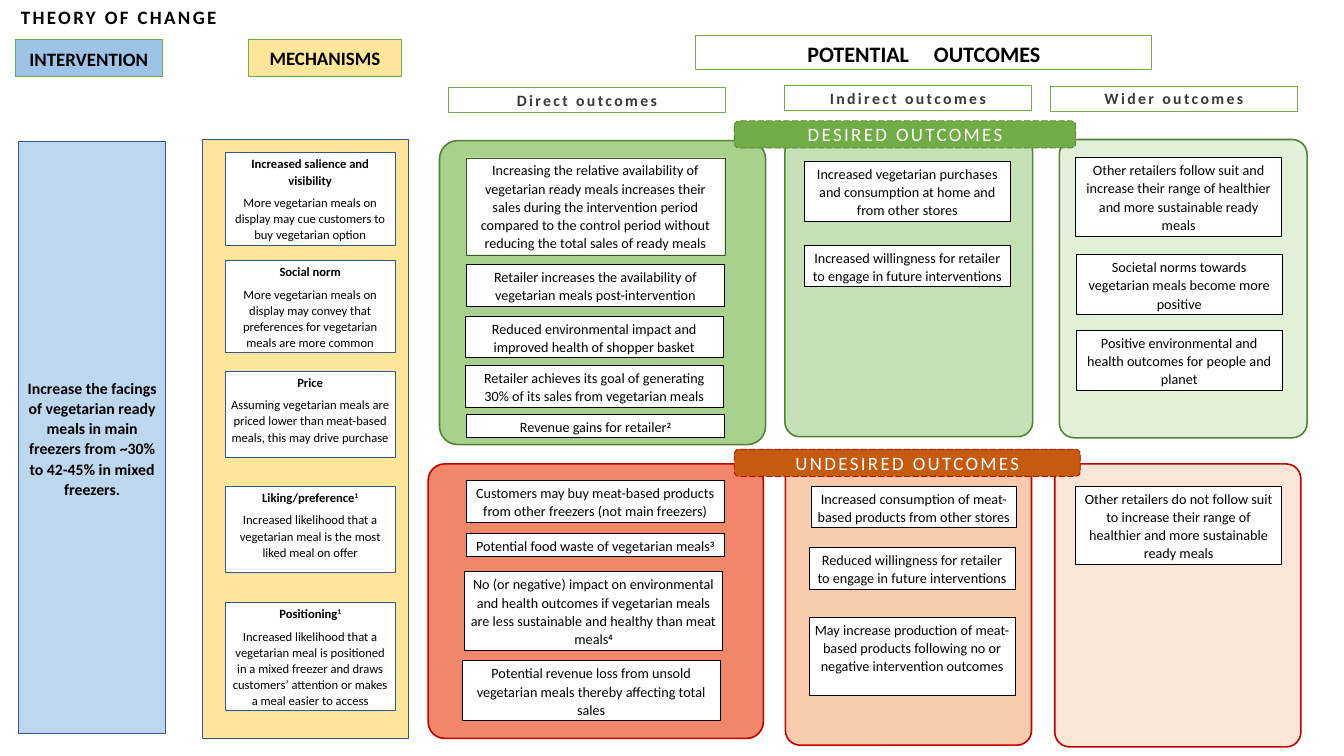
from dataclasses import dataclass

from pptx import Presentation
from pptx.dml.color import RGBColor
from pptx.enum.dml import MSO_LINE
from pptx.enum.shapes import MSO_SHAPE as Preset
from pptx.enum.text import MSO_ANCHOR as Anchor, MSO_AUTO_SIZE as AutoSize, PP_ALIGN as Align
from pptx.util import Inches, Pt

COLORS = {
    "black": "000000", "white": "FFFFFF", "heading": "3B3838",
    "green": "70AD47", "green_edge": "548235", "green_badge_edge": "538035",
    "deep_green": "385723", "red": "C00000", "rust": "C55A11", "navy": "325491",
    "blue": "9DC3E6", "pale_blue": "BDD7EE", "yellow": "FFE699",
    "direct_good": "A9D18E", "indirect_good": "C5E0B4", "wider_good": "E2F0D9",
    "direct_bad": "F18669", "indirect_bad": "F8CBAD", "wider_bad": "FBE5D6",
}


@dataclass
class Card:
    """An outcome card, offset from its panel and sized by its line count."""
    dx: float
    dy: float
    lines: int
    text: str
    edge: str = "black"
    edge_width: float = 1


def rgb(name):
    """Return the named palette colour."""
    return RGBColor.from_string(COLORS[name])


def draw_box(slide, box, fill, edge, edge_width=1, corner=None):
    """Draw a rectangle, rounded when a corner ratio is given."""
    preset = Preset.RECTANGLE if corner is None else Preset.ROUNDED_RECTANGLE
    panel = slide.shapes.add_shape(preset, *map(Inches, box))
    if corner is not None:
        panel.adjustments[0] = corner
    panel.shadow.inherit = False
    panel.fill.solid()
    panel.fill.fore_color.rgb = rgb(fill)
    panel.line.color.rgb = rgb(edge)
    panel.line.width = Pt(edge_width)
    return panel


def write(holder, texts, size, color="black", bold=(False,), anchor=Anchor.TOP,
          tracking=0, spacing=1.07):
    """Fill a shape with centred paragraphs; ^ starts a bold superscript."""
    frame = holder.text_frame
    frame.word_wrap = True
    frame.vertical_anchor = anchor
    for index, (text, heavy) in enumerate(zip(texts, bold)):
        paragraph = frame.paragraphs[0] if index == 0 else frame.add_paragraph()
        paragraph.alignment = Align.CENTER
        paragraph.line_spacing = spacing
        paragraph.space_before = Pt(0)
        paragraph.space_after = Pt(8 if spacing > 1 else 0)
        paragraph.font.name = "Calibri"
        paragraph.font.size = Pt(size)
        paragraph.font.bold = heavy
        paragraph.font.color.rgb = rgb(color)
        for position, part in enumerate(text.split("^")):
            run = paragraph.add_run()
            run.text = part
            if tracking:
                run._r.get_or_add_rPr().set("spc", str(tracking * 100))
            if position:
                run.font.bold = True
                run._r.get_or_add_rPr().set("baseline", "30000")


def add_title(slide, box):
    """Place the slide title."""
    title = slide.shapes.title
    title.left, title.top, title.width, title.height = map(Inches, box)
    write(title, ["THEORY OF CHANGE"], 24, bold=[True], tracking=3, spacing=1.0)
    title.text_frame.auto_size = AutoSize.NONE


def add_column_header(slide, box, text, fill, size=24):
    """Draw a bold header above a main column."""
    header = draw_box(slide, box, fill, "green")
    write(header, [text], size, bold=[True], anchor=Anchor.MIDDLE)
    return header


def add_outcomes_header(slide, box):
    """Draw the outcomes header with a widened gap between its words."""
    header = add_column_header(slide, box, "POTENTIAL", "white", 28)
    paragraph = header.text_frame.paragraphs[0]
    gap = paragraph.add_run()
    gap.text = " "
    gap._r.get_or_add_rPr().set("spc", "2530")
    paragraph.add_run().text = "OUTCOMES"


def add_outcome_heading(slide, box, text):
    """Draw the heading of one outcome column."""
    heading = draw_box(slide, box, "white", "green")
    write(heading, [text], 20, "heading", [True], tracking=3, spacing=1.0)


def add_intervention(slide, box):
    """Draw the intervention column."""
    column = draw_box(slide, box, "pale_blue", "navy")
    write(column, ["Increase the facings of vegetarian ready meals in main freezers "
                   "from ~30% to 42-45% in mixed freezers."],
          20, bold=[True], anchor=Anchor.MIDDLE)


def add_mechanisms(slide, box, mechanisms):
    """Draw the mechanisms column and its cards."""
    draw_box(slide, box, "yellow", "navy")
    left, top = box[:2]
    for dy, height, name, effect in mechanisms:
        card = draw_box(slide, (left + 0.4, top + dy, 3, height), "white", "navy")
        write(card, [name, effect], 16, bold=[True, False])


def add_outcome_panel(slide, box, fill, edge, card_width, cards):
    """Draw a rounded outcome panel and the cards inside it."""
    draw_box(slide, box, fill, edge, 2, 0.06)
    left, top = box[:2]
    for card in cards:
        height = 0.41 + 0.325 * (card.lines - 1)
        place = (left + card.dx, top + card.dy, card_width, height)
        outcome = draw_box(slide, place, "white", card.edge, card.edge_width)
        write(outcome, [card.text], 18)


def add_badge(slide, box, text, fill, edge):
    """Draw a dashed badge that labels a row of panels."""
    badge = draw_box(slide, box, fill, edge, corner=0.17)
    badge.line.dash_style = MSO_LINE.LONG_DASH
    write(badge, [text], 24, "white", anchor=Anchor.MIDDLE, tracking=3, spacing=1.0)


MECHANISMS = [
    (0.23, 1.63, "Increased salience and visibility",
     "More vegetarian meals on display may cue customers to buy vegetarian option"),
    (2.13, 1.63, "Social norm",
     "More vegetarian meals on display may convey that preferences for vegetarian "
     "meals are more common"),
    (4.08, 1.52, "Price",
     "Assuming vegetarian meals are priced lower than meat-based meals, this may "
     "drive purchase"),
    (6.11, 1.52, "Liking/preference^1",
     "Increased likelihood that a vegetarian meal is the most liked meal on offer"),
    (8.16, 1.9, "Positioning^1",
     "Increased likelihood that a vegetarian meal is positioned in a mixed freezer "
     "and draws customers’ attention or makes a meal easier to access"),
]

PANELS = [
    ((7.55, 8.18, 5.91, 4.84), "direct_bad", "red", 4.55, [
        Card(0.67, 0.29, 2, "Customers may buy meat-based products from other freezers "
                            "(not main freezers)"),
        Card(0.67, 1.22, 1, "Potential food waste of vegetarian meals^3"),
        Card(0.64, 1.9, 4, "No (or negative) impact on environmental and health outcomes if "
                           "vegetarian meals are less sustainable and healthy than meat meals^4"),
        Card(0.6, 3.47, 3, "Potential revenue loss from unsold vegetarian meals thereby "
                           "affecting total sales")]),
    ((7.75, 2.48, 5.75, 5.36), "direct_good", "green_edge", 4.56, [
        Card(0.47, 0.3, 5, "Increasing the relative availability of vegetarian ready meals "
                           "increases their sales during the intervention period compared to the "
                           "control period without reducing the total sales of ready meals",
             "deep_green", 0.25),
        Card(0.47, 2.18, 2, "Retailer increases the availability of vegetarian meals "
                            "post-intervention"),
        Card(0.45, 3.09, 2, "Reduced environmental impact and improved health of shopper basket"),
        Card(0.45, 3.96, 2, "Retailer achieves its goal of generating 30% of its sales from "
                            "vegetarian meals"),
        Card(0.47, 4.83, 1, "Revenue gains for retailer^2")]),
    ((13.84, 2.42, 4.37, 5.28), "indirect_good", "green_edge", 3.62, [
        Card(0.35, 0.42, 3, "Increased vegetarian purchases and consumption at home and from "
                            "other stores"),
        Card(0.35, 1.9, 2, "Increased willingness for retailer to engage in future "
                           "interventions")]),
    ((13.85, 8, 4.34, 5.14), "indirect_bad", "red", 3.63, [
        Card(0.45, 0.57, 2, "Increased consumption of meat-based products from other stores"),
        Card(0.42, 1.65, 2, "Reduced willingness for retailer to engage in future interventions"),
        Card(0.42, 2.88, 4, "May increase production of meat-based products following no or "
                            "negative intervention outcomes")]),
    ((18.68, 2.46, 4.37, 5.26), "wider_good", "green_edge", 3.63, [
        Card(0.29, 0.32, 4, "Other retailers follow suit and increase their range of healthier "
                            "and more sustainable ready meals"),
        Card(0.3, 2.03, 3, "Societal norms towards vegetarian meals become more positive"),
        Card(0.3, 3.36, 3, "Positive environmental and health outcomes for people and planet")]),
    ((18.6, 8.18, 4.34, 4.99), "wider_bad", "red", 3.63, [
        Card(0.37, 0.39, 4, "Other retailers do not follow suit to increase their range of "
                            "healthier and more sustainable ready meals")]),
]


def main():
    """Build the theory of change slide."""
    deck = Presentation()
    deck.slide_width, deck.slide_height = Inches(23.7), Inches(13.33)
    slide = deck.slides.add_slide(deck.slide_layouts[5])
    add_title(slide, (0.11, 0.05, 3.97, 0.5))
    add_column_header(slide, (0.27, 0.7, 2.59, 0.65), "INTERVENTION", "blue")
    add_column_header(slide, (4.38, 0.69, 2.7, 0.65), "MECHANISMS", "yellow")
    add_outcomes_header(slide, (12.27, 0.62, 8.04, 0.61))
    add_outcome_heading(slide, (7.91, 1.55, 4.88, 0.44), "Direct outcomes")
    add_outcome_heading(slide, (13.84, 1.51, 4.34, 0.44), "Indirect outcomes")
    add_outcome_heading(slide, (18.53, 1.52, 4.34, 0.44), "Wider outcomes")
    add_intervention(slide, (0.33, 2.5, 2.59, 10.44))
    add_mechanisms(slide, (3.57, 2.46, 3.64, 10.56), MECHANISMS)
    for panel in PANELS:
        add_outcome_panel(slide, *panel)
    add_badge(slide, (12.95, 2.13, 6.02, 0.48), "DESIRED OUTCOMES", "green", "green_badge_edge")
    add_badge(slide, (12.95, 7.92, 6.1, 0.48), "UNDESIRED OUTCOMES", "rust", "red")
    deck.save("out.pptx")


if __name__ == "__main__":
    main()
